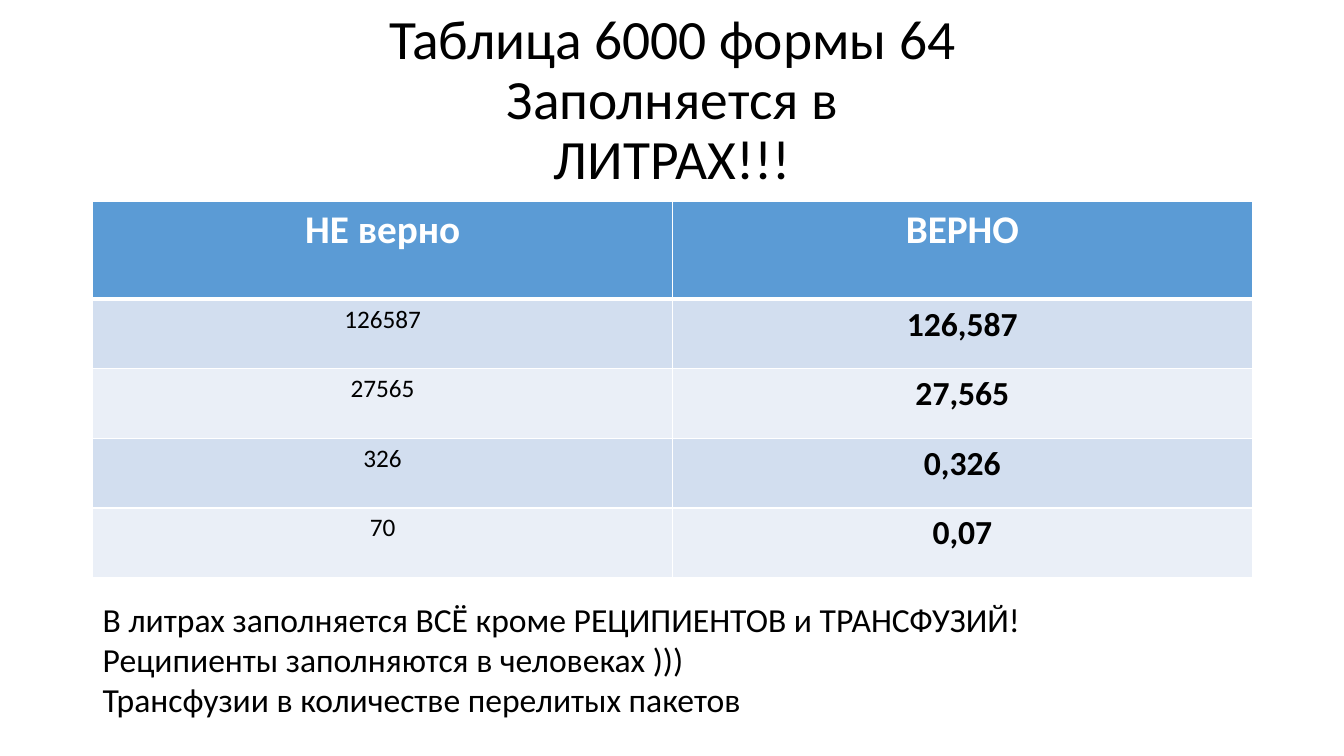
from lxml import etree
from pptx import Presentation
from pptx.dml.color import RGBColor
from pptx.enum.text import MSO_ANCHOR, PP_ALIGN
from pptx.oxml.ns import qn
from pptx.util import Inches, Pt

LEFT, CENTER = PP_ALIGN.LEFT, PP_ALIGN.CENTER
TOP, MIDDLE = MSO_ANCHOR.TOP, MSO_ANCHOR.MIDDLE

TITLE = ["Таблица 6000 формы 64", "Заполняется в", "ЛИТРАХ!!!"]
HEADER = ("НЕ верно", "ВЕРНО")
VALUES = [
    ("126587", "126,587"),
    ("27565", "27,565"),
    ("326", "0,326"),
    ("70", "0,07"),
]
NOTES = [
    "В литрах заполняется ВСЁ кроме РЕЦИПИЕНТОВ и ТРАНСФУЗИЙ!",
    "Реципиенты заполняются в человеках )))",
    "Трансфузии в количестве перелитых пакетов",
]

THEME = {
    "font": "Calibri",
    "text": "000000",
    "light": "FFFFFF",
    "header": "5B9BD5",
    "bands": ("D2DEEF", "EAEFF7"),
    "title_size": 39.6,
    "header_size": 28,
    "wrong_size": 18,
    "body_size": 24,
}

MARGIN, WIDTH = 0.92, 11.5
HEADER_HEIGHT, ROW_HEIGHT = 0.97, 0.69


def write(tf, lines, size, color=THEME["text"], bold=False,
          align=LEFT, anchor=TOP, spacing=1.0):
    tf.word_wrap = True
    tf.vertical_anchor = anchor
    for i, line in enumerate(lines):
        p = tf.add_paragraph() if i else tf.paragraphs[0]
        p.alignment = align
        p.line_spacing = spacing
        r = p.add_run()
        r.text = line
        r.font.name = THEME["font"]
        r.font.size = Pt(size)
        r.font.bold = bold
        r.font.color.rgb = RGBColor.from_string(color)


def add_text(s, box, lines, size, **fmt):
    sp = s.shapes.add_textbox(*map(Inches, box))
    write(sp.text_frame, lines, size, **fmt)


def paint_cell(cell, fill, top, bottom):
    tcPr = cell._tc.get_or_add_tcPr()
    for side, width in (("L", 1), ("R", 1), ("T", top), ("B", bottom)):
        ln = etree.SubElement(tcPr, qn(f"a:ln{side}"), w=str(Pt(width)))
        solid = etree.SubElement(ln, qn("a:solidFill"))
        etree.SubElement(solid, qn("a:srgbClr"), val=THEME["light"])
    cell.fill.solid()
    cell.fill.fore_color.rgb = RGBColor.from_string(fill)


def add_comparison(s, top):
    rows = [HEADER] + VALUES
    heights = [HEADER_HEIGHT] + [ROW_HEIGHT] * len(VALUES)
    frame = s.shapes.add_table(len(rows), len(HEADER), Inches(MARGIN), Inches(top),
                               Inches(WIDTH), Inches(sum(heights)))
    table = frame.table
    for column in table.columns:
        column.width = Inches(WIDTH / len(HEADER))
    for i, (row, height) in enumerate(zip(rows, heights)):
        table.rows[i].height = Inches(height)
        for j, value in enumerate(row):
            cell = table.cell(i, j)
            if i == 0:
                fill, color, size = THEME["header"], THEME["light"], THEME["header_size"]
            else:
                fill, color = THEME["bands"][(i - 1) % 2], THEME["text"]
                size = THEME["body_size"] if j else THEME["wrong_size"]
            write(cell.text_frame, [value], size, color=color,
                  bold=i == 0 or j == 1, align=CENTER)
            paint_cell(cell, fill, top=3 if i == 1 else 1, bottom=3 if i == 0 else 1)


def main():
    prs = Presentation()
    prs.slide_width, prs.slide_height = Inches(13.33), Inches(7.5)
    s = prs.slides.add_slide(prs.slide_layouts[6])
    add_text(s, (MARGIN, 0.17, WIDTH, 1.68), TITLE, THEME["title_size"],
             align=CENTER, anchor=MIDDLE, spacing=0.9)
    add_comparison(s, 2)
    add_text(s, (MARGIN, 5.89, 9.38, 1.31), NOTES, THEME["body_size"])
    prs.save("out.pptx")


if __name__ == "__main__":
    main()
